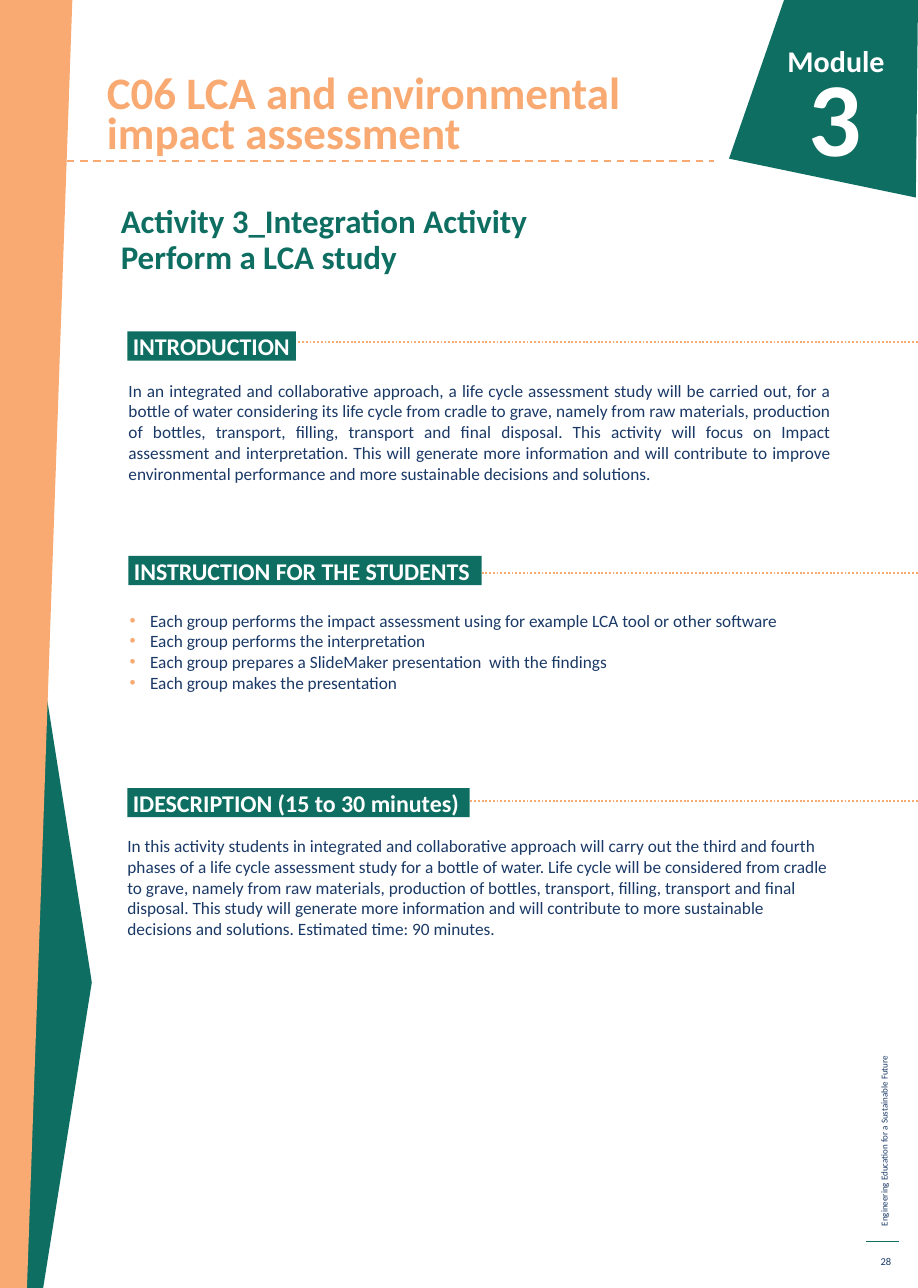
"""Build the activity sheet for a life cycle assessment study."""
from dataclasses import dataclass
from typing import Optional

from lxml import etree
from pptx import Presentation
from pptx.dml.color import RGBColor
from pptx.enum.dml import MSO_LINE
from pptx.enum.shapes import MSO_CONNECTOR, MSO_SHAPE
from pptx.enum.text import MSO_ANCHOR, MSO_AUTO_SIZE, PP_ALIGN
from pptx.oxml.ns import qn
from pptx.util import Inches, Length, Pt

GREEN = RGBColor(0x0E, 0x6E, 0x61)
ORANGE = RGBColor(0xF9, 0xAA, 0x73)
NAVY = RGBColor(0x1A, 0x39, 0x66)
WHITE = RGBColor(0xFF, 0xFF, 0xFF)
FONT = "Calibri"
LEFT, RIGHT, JUSTIFY = PP_ALIGN.LEFT, PP_ALIGN.RIGHT, PP_ALIGN.JUSTIFY
TOP, MIDDLE, BOTTOM = MSO_ANCHOR.TOP, MSO_ANCHOR.MIDDLE, MSO_ANCHOR.BOTTOM
NO_FIT = MSO_AUTO_SIZE.NONE
DOTS, DASHES = MSO_LINE.ROUND_DOT, MSO_LINE.DASH
STRAIGHT, RECTANGLE = MSO_CONNECTOR.STRAIGHT, MSO_SHAPE.RECTANGLE
TITLE_ONLY = 5
COLUMNS, ROWS = 34, 47.72
CELL = Inches(0.25)
BODY_WIDTH = 26
HEADING_HEIGHT = 1.08


@dataclass
class Box:
    """A rectangle in grid cells."""
    left: float
    top: float
    width: float
    height: float


@dataclass
class Style:
    """How a block of text looks; margins are in grid cells."""
    size: float
    color: RGBColor
    bold: bool = False
    align: PP_ALIGN = LEFT
    anchor: MSO_ANCHOR = TOP
    line_spacing: Optional[float] = None
    space_before: float = 0
    margins: tuple[float, float] = (0.4, 0.2)
    bullets: bool = False


@dataclass
class Section:
    """A heading on a dotted rule with its body text."""
    heading: str
    heading_box: Box
    rule_row: float
    body_left: float
    body_top: float
    align: PP_ALIGN
    paragraphs: list[str]
    bullets: bool = False


@dataclass
class Outline:
    """A filled polygon with its corners in grid cells."""
    color: RGBColor
    points: list[tuple[float, float]]


@dataclass
class Label:
    """A free text with its place and look."""
    text: str
    box: Box
    style: Style
    rotation: float = 0


OUTLINES = [
    Outline(GREEN, [(1.6, ROWS), (0.92, ROWS), (0.92, 20.68), (3.32, 35.88), (3.4, 36.4)]),
    Outline(ORANGE, [(0, 0), (2.68, 0), (1, ROWS), (0, ROWS)]),
    Outline(GREEN, [(COLUMNS, 0), (29.04, 0), (27, 5.88), (33.92, 7.32)]),
]
TITLE = Label("C06 LCA and environmental impact assessment", Box(3.56, 2.4, 21.56, 3.68),
              Style(30, ORANGE, True, anchor=BOTTOM, line_spacing=Pt(26.8)))
LABELS = [
    Label("Activity 3_Integration Activity Perform a LCA study", Box(4.08, 7.4, 18.4, 4.2),
          Style(22, GREEN, True, line_spacing=0.9, space_before=8.5)),
    Label("Module", Box(25.96, 1.36, 7.2, 5.68),
          Style(20, WHITE, True, RIGHT, space_before=22.7)),
    Label("3", Box(25.12, 1.72, 7.2, 5.68),
          Style(70, WHITE, True, RIGHT, space_before=22.7)),
    Label("Engineering Education for a Sustainable Future", Box(23.76, 36.44, 17.96, 0.8),
          Style(6, NAVY), 270),
    Label("28", Box(32.08, 46.16, 1.32, 1.16), Style(7, NAVY, align=RIGHT, anchor=MIDDLE)),
]
SECTIONS = [
    Section("INTRODUCTION", Box(4.72, 12.28, 6.24, HEADING_HEIGHT), 12.68, 4.76, 14.08, JUSTIFY, [
        "In an integrated and collaborative approach, a life cycle assessment study will be "
        "carried out, for a bottle of water considering its life cycle from cradle to grave, "
        "namely from raw materials, production of bottles, transport, filling, transport and "
        "final disposal. This activity will focus on Impact assessment and interpretation. "
        "This will generate more information and will contribute to improve environmental "
        "performance and more sustainable decisions and solutions."]),
    Section("INSTRUCTION FOR THE STUDENTS", Box(4.76, 20.6, 13.08, HEADING_HEIGHT),
            21.24, 4.76, 22.6, LEFT, [
        "Each group performs the impact assessment using for example LCA tool or other software",
        "Each group performs the interpretation",
        "Each group prepares a SlideMaker presentation  with the findings",
        "Each group makes the presentation"], True),
    Section("IDESCRIPTION (15 to 30 minutes)", Box(4.72, 29.2, 12.68, HEADING_HEIGHT),
            29.68, 4.72, 30.96, LEFT, [
        "In this activity students in integrated and collaborative approach will carry out the "
        "third and fourth phases of a life cycle assessment study for a bottle of water. Life "
        "cycle will be considered from cradle to grave, namely from raw materials, production "
        "of bottles, transport, filling, transport and final disposal. This study will generate "
        "more information and will contribute to more sustainable decisions and solutions. "
        "Estimated time: 90 minutes."]),
]


def cells(count: float) -> Length:
    """Turn grid cells into a length."""
    return Length(round(count * CELL))


def frame(box: Box) -> tuple[Length, ...]:
    """Return the left, top, width and height of a box."""
    return cells(box.left), cells(box.top), cells(box.width), cells(box.height)


def add_bullet(paragraph) -> None:
    """Give a paragraph an orange bullet and a hanging indent."""
    properties = paragraph._p.get_or_add_pPr()
    properties.set("marL", str(Inches(0.2)))
    properties.set("indent", str(-Inches(0.19)))
    color = etree.SubElement(properties, qn("a:buClr"))
    etree.SubElement(color, qn("a:srgbClr")).set("val", str(ORANGE))
    etree.SubElement(properties, qn("a:buFont")).set("typeface", "Arial")
    etree.SubElement(properties, qn("a:buChar")).set("char", "•")


def write(shape, texts: list[str], style: Style) -> None:
    """Write one paragraph per text into a shape."""
    text_frame = shape.text_frame
    text_frame.word_wrap = True
    text_frame.auto_size = NO_FIT
    text_frame.vertical_anchor = style.anchor
    side, edge = style.margins
    text_frame.margin_left = text_frame.margin_right = cells(side)
    text_frame.margin_top = text_frame.margin_bottom = cells(edge)
    for index, text in enumerate(texts):
        paragraph = text_frame.add_paragraph() if index else text_frame.paragraphs[0]
        paragraph.alignment = style.align
        paragraph.line_spacing = style.line_spacing
        paragraph.space_before = Pt(style.space_before)
        if style.bullets:
            add_bullet(paragraph)
        run = paragraph.add_run()
        run.text = text
        run.font.name = FONT
        run.font.size = Pt(style.size)
        run.font.bold = style.bold
        run.font.color.rgb = style.color


def paint(shape, color: RGBColor) -> None:
    """Fill a shape flat, without line or shadow."""
    shape.shadow.inherit = False
    shape.fill.solid()
    shape.fill.fore_color.rgb = color
    shape.line.fill.background()


def add_outline(slide, outline: Outline) -> None:
    """Draw a filled polygon."""
    points = [(cells(column), cells(row)) for column, row in outline.points]
    builder = slide.shapes.build_freeform(*points[0])
    builder.add_line_segments(points[1:], close=True)
    paint(builder.convert_to_shape(), outline.color)


def add_rule(slide, start: float, end: float, row: float, color: RGBColor = ORANGE,
             width: float = 1.25, dash: Optional[MSO_LINE] = None) -> None:
    """Draw a horizontal rule."""
    rule = slide.shapes.add_connector(STRAIGHT, cells(start), cells(row), cells(end), cells(row))
    rule.line.color.rgb = color
    rule.line.width = Pt(width)
    rule.line.dash_style = dash
    etree.SubElement(rule._element.spPr, qn("a:effectLst"))


def add_label(slide, label: Label) -> None:
    """Place a free text."""
    shape = slide.shapes.add_textbox(*frame(label.box))
    shape.rotation = label.rotation
    write(shape, [label.text], label.style)


def add_section(slide, section: Section) -> None:
    """Draw the rule, the heading and the body of a section."""
    add_rule(slide, 10.08, COLUMNS, section.rule_row, dash=DOTS)
    heading = slide.shapes.add_shape(RECTANGLE, *frame(section.heading_box))
    paint(heading, GREEN)
    write(heading, [section.heading], Style(16, WHITE, True, anchor=MIDDLE, margins=(0.2, 0)))
    body_box = Box(section.body_left, section.body_top, BODY_WIDTH, 4)
    body = slide.shapes.add_textbox(*frame(body_box))
    write(body, section.paragraphs, Style(11.5, NAVY, align=section.align, margins=(0, 0),
                                          bullets=section.bullets))


def main() -> None:
    """Build and save the slide."""
    presentation = Presentation()
    presentation.slide_width, presentation.slide_height = cells(COLUMNS), cells(ROWS)
    slide = presentation.slides.add_slide(presentation.slide_layouts[TITLE_ONLY])
    title = slide.shapes.title
    title.left, title.top, title.width, title.height = frame(TITLE.box)
    write(title, [TITLE.text], TITLE.style)
    for outline in OUTLINES:
        add_outline(slide, outline)
    add_rule(slide, 2.48, 26.44, 5.96, dash=DASHES)
    add_rule(slide, 32.08, 33.28, 46, GREEN, 0.75)
    for section in SECTIONS:
        add_section(slide, section)
    for label in LABELS:
        add_label(slide, label)
    presentation.save("out.pptx")


if __name__ == "__main__":
    main()
